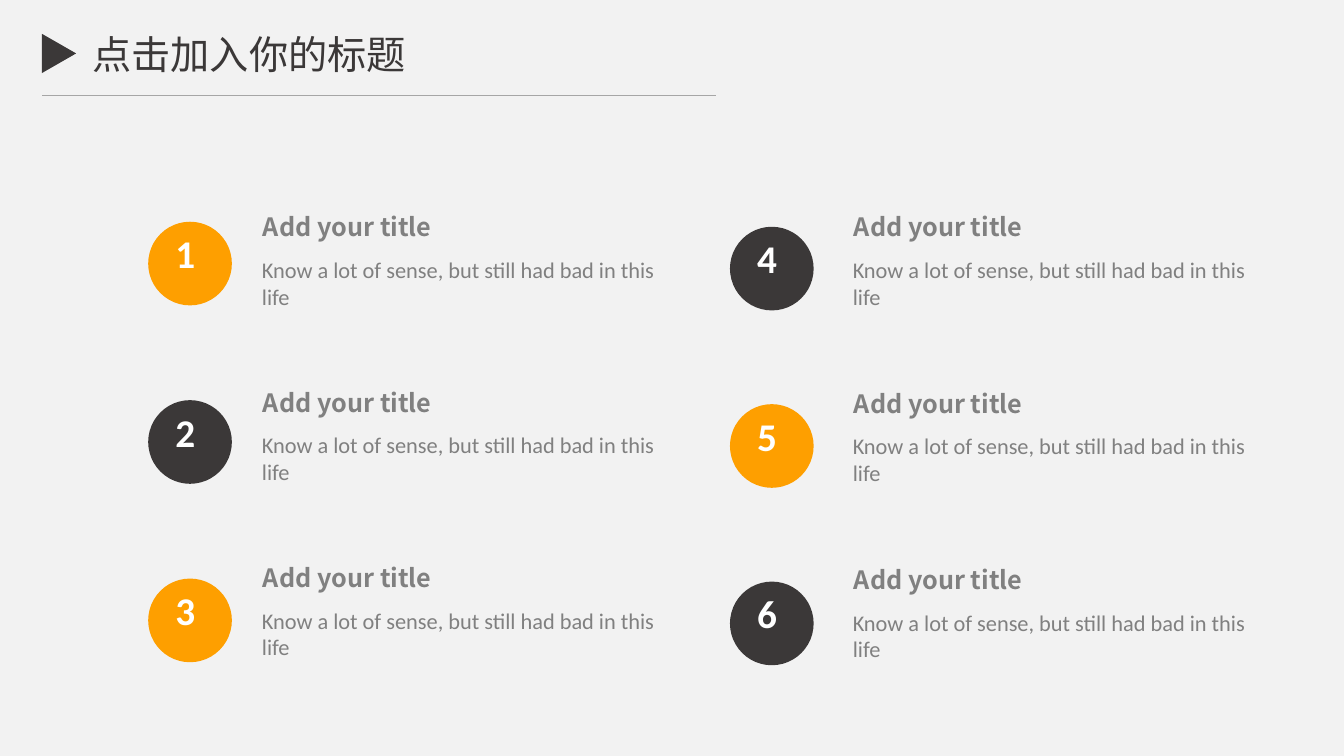
from dataclasses import dataclass

from lxml.etree import SubElement
from pptx import Presentation
from pptx.dml.color import RGBColor as RGB
from pptx.enum.shapes import MSO_CONNECTOR as Connector, MSO_SHAPE as Shape
from pptx.enum.text import MSO_AUTO_SIZE as AutoSize, PP_ALIGN as Align
from pptx.oxml.ns import qn
from pptx.util import Inches, Pt


@dataclass(frozen=True)
class Theme:
    background: RGB = RGB.from_string("F2F2F2")
    dark: RGB = RGB.from_string("3B3838")
    accent: RGB = RGB.from_string("FE9F00")
    rule: RGB = RGB.from_string("A6A6A6")
    body: RGB = RGB.from_string("808080")
    white: RGB = RGB.from_string("FFFFFF")
    latin_font: str = "Calibri"
    cjk_font: str = "Noto Sans CJK SC"
    headline_size: int = 28
    item_title_size: int = 18
    item_text_size: int = 16


class SlideBuilder:
    """Draws elements on one slide in one theme."""

    def __init__(self, slide, theme):
        self.slide = slide
        self.theme = theme
        fill = slide.background.fill
        fill.solid()
        fill.fore_color.rgb = theme.background

    def shape(self, kind, left, top, width, height, color, rotation=0):
        figure = self.slide.shapes.add_shape(
            kind, Inches(left), Inches(top), Inches(width), Inches(height))
        figure.rotation = rotation
        figure.shadow.inherit = False
        figure.fill.solid()
        figure.fill.fore_color.rgb = color
        figure.line.fill.background()

    def rule(self, left, right, y):
        line = self.slide.shapes.add_connector(
            Connector.STRAIGHT, Inches(left), Inches(y), Inches(right), Inches(y))
        line.line.color.rgb = self.theme.rule
        line.line.width = Pt(0.5)
        SubElement(line._element.spPr, qn("a:effectLst"))

    def text(self, words, left, top, width, height, size, color, font,
             bold=False, align=Align.LEFT, inset=True):
        box = self.slide.shapes.add_textbox(
            Inches(left), Inches(top), Inches(width), Inches(height))
        frame = box.text_frame
        frame.word_wrap = True
        frame.auto_size = AutoSize.SHAPE_TO_FIT_TEXT
        if not inset:
            frame.margin_left = frame.margin_right = 0
            frame.margin_top = frame.margin_bottom = 0
        paragraph = frame.paragraphs[0]
        paragraph.text = words
        paragraph.alignment = align
        style = paragraph.font
        style.name, style.size, style.bold = font, Pt(size), bold
        style.color.rgb = color
        # East Asian typeface follows the Latin one
        defaults = paragraph._p.pPr.find(qn("a:defRPr"))
        SubElement(defaults, qn("a:ea")).set("typeface", font)

    def header(self, words):
        theme = self.theme
        self.text(words, 0.59, 0.3, 3.76, 0.47, theme.headline_size, theme.dark,
                  theme.cjk_font, align=Align.CENTER, inset=False)
        self.shape(Shape.ISOSCELES_TRIANGLE, 0.39, 0.36, 0.39, 0.34, theme.dark, 90)
        self.rule(0.42, 7.1, 0.95)

    def badge(self, number, left, top):
        theme = self.theme
        color = theme.accent if number % 2 else theme.dark
        self.shape(Shape.OVAL, left, top, 0.83, 0.83, color)
        self.text(str(number), left + 0.17, top + 0.03, 0.41, 0.75,
                  theme.headline_size, theme.white, theme.latin_font, bold=True)

    def item(self, title, description, left, top):
        theme = self.theme
        self.text(title, left + 0.01, top, 2.99, 0.4, theme.item_title_size,
                  theme.body, theme.cjk_font, bold=True)
        self.text(description, left, top + 0.44, 4.14, 0.64,
                  theme.item_text_size, theme.body, theme.latin_font)


@dataclass(frozen=True)
class Column:
    badge_left: float
    badge_top: float
    badge_pitch: float
    item_left: float
    item_pitch: float


ROWS = 3
ITEM_TOP = 2.05
COLUMNS = (
    Column(1.47, 2.2, 1.77, 2.5, 1.74),
    Column(7.24, 2.25, 1.76, 8.36, 1.75),
)


def main():
    deck = Presentation()
    deck.slide_width, deck.slide_height = Inches(13.33), Inches(7.5)
    builder = SlideBuilder(deck.slides.add_slide(deck.slide_layouts[6]), Theme())

    # Headline with marker and rule
    builder.header("点击加入你的标题")

    # Six numbered items, filled column by column
    for index, column in enumerate(COLUMNS):
        for row in range(ROWS):
            builder.badge(index * ROWS + row + 1, column.badge_left,
                          column.badge_top + row * column.badge_pitch)
            builder.item("Add your title",
                         "Know a lot of sense, but still had bad in this life",
                         column.item_left, ITEM_TOP + row * column.item_pitch)

    deck.save("out.pptx")


if __name__ == "__main__":
    main()
